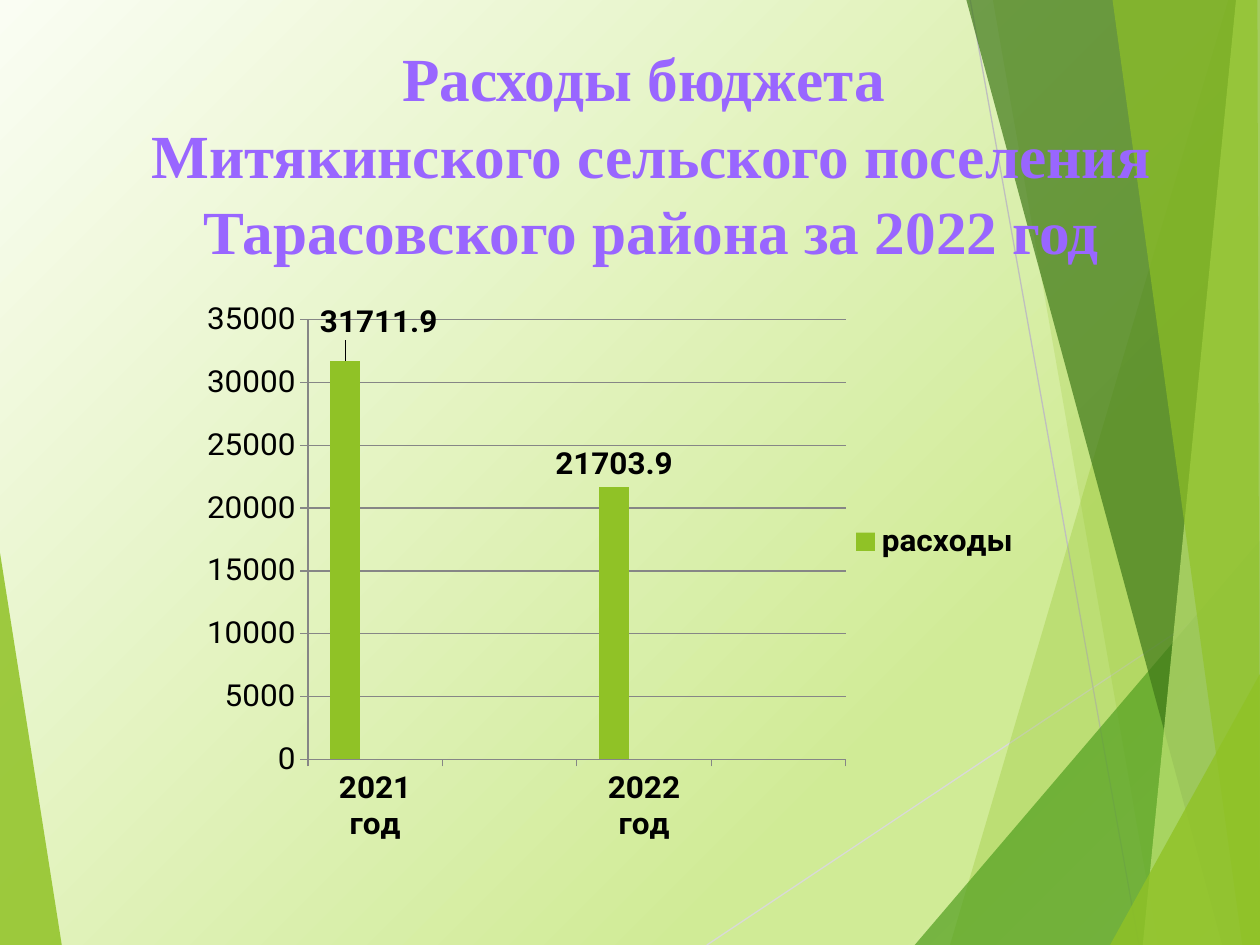
from lxml import etree
from pptx import Presentation
from pptx.chart import data as cd
from pptx.dml import color as clr
from pptx.enum import chart as ch, shapes, text
from pptx.oxml import ns, xmlchemy as xc
from pptx.util import Inches, Pt

THEME = {
    "lime": "90C226", "green": "54A021", "forest": "3F7819", "pale": "C0E474",
    "gold": "E6B91E", "title": "9966FF", "ink": "000000", "grid": "868686",
    "background": [(0, "FAFDF3"), (74, "D0EB96"), (83, "D0EB96"), (100, "DFF1B9")],
    "title_font": "Times New Roman", "chart_font": "Roboto",
    "title_size": Pt(35), "chart_size": Pt(18), "hairline": Pt(0.75),
}

prs = Presentation()
prs.slide_width, prs.slide_height = Inches(10), Inches(7.5)


def share(*percents):
    sides = (prs.slide_width, prs.slide_height)
    return [int(sides[i % 2] * v / 100) for i, v in enumerate(percents)]


def add_layout(parent, index, **values):
    layout = etree.Element(ns.qn("c:layout"))
    manual = etree.SubElement(layout, ns.qn("c:manualLayout"))
    for tag, value in values.items():
        etree.SubElement(manual, ns.qn("c:" + tag)).set("val", str(value))
    parent.insert(index, layout)


slide = prs.slides.add_slide(prs.slide_layouts[6])
bg = slide.background.fill
bg.gradient()
stops = slide._element.find(".//" + ns.qn("a:gsLst"))
for old in list(stops):
    stops.remove(old)
for place, rgb in THEME["background"]:
    gs = etree.SubElement(stops, ns.qn("a:gs"), pos=str(place * 1000))
    etree.SubElement(gs, ns.qn("a:srgbClr"), val=rgb)
slide._element.find(".//" + ns.qn("a:lin")).set("ang", str(45 * 60000))

rays = [((56.1, 100, 100, 61), "D9D9D9"), ((77, 0, 90.4, 100), "BFBFBF")]
facets = [
    ("lime", 85, [(0, 58.5), (4.9, 100), (0, 100)]),
    ("lime", 30, [(97.5, 0), (75.4, 100), (100, 100), (100, 0)]),
    ("lime", 20, [(78.8, 0), (91.9, 100), (100, 100), (100, 0)]),
    ("green", 72, [(72.6, 100), (100, 57.2), (100, 100)]),
    ("forest", 70, [(76.7, 0), (97, 100), (100, 100), (100, 0)]),
    ("pale", 70, [(98.1, 0), (90.7, 100), (100, 100), (100, 0)]),
    ("lime", 65, [(88.3, 0), (98.6, 100), (100, 100), (99.8, 0)]),
    ("lime", 80, [(88.1, 100), (100, 71.3), (100, 100)]),
]

for i, (name, opacity, corners) in enumerate(facets):
    points = [share(*c) for c in corners]
    builder = slide.shapes.build_freeform(*points[0])
    builder.add_line_segments(points[1:])
    sp = builder.convert_to_shape()
    sp.shadow.inherit = False
    sp.fill.solid()
    sp.fill.fore_color.rgb = clr.RGBColor.from_string(THEME[name])
    rgb = sp._element.spPr.find(".//" + ns.qn("a:srgbClr"))
    etree.SubElement(rgb, ns.qn("a:alpha"), val=str(opacity * 1000))
    sp.line.fill.background()
    if i == 0:
        for ends, color in rays:
            ray = slide.shapes.add_connector(shapes.MSO_CONNECTOR.STRAIGHT, *share(*ends))
            ray.line.color.rgb = clr.RGBColor.from_string(color)
            ray.line.width = THEME["hairline"]
            etree.SubElement(ray._element.spPr, ns.qn("a:effectLst"))

title = slide.shapes.add_textbox(*share(6.7, 3.33, 90, 16.67))
tf = title.text_frame
tf.word_wrap = True
tf.vertical_anchor = text.MSO_ANCHOR.TOP
lines = ["Расходы бюджета ", "Митякинского сельского поселения Тарасовского района за 2022 год"]
for i, line in enumerate(lines):
    p = tf.add_paragraph() if i else tf.paragraphs[0]
    p.alignment = text.PP_ALIGN.CENTER
    p.line_spacing = 1.04
    r = p.add_run()
    r.text = line
    r.font.size, r.font.bold, r.font.name = THEME["title_size"], True, THEME["title_font"]
    r.font.color.rgb = clr.RGBColor.from_string(THEME["title"])
    effects = etree.Element(ns.qn("a:effectLst"))
    shadow = etree.SubElement(effects, ns.qn("a:outerShdw"), blurRad="38100", dist="25400", dir="13500000")
    dark = etree.SubElement(shadow, ns.qn("a:srgbClr"), val=THEME["ink"])
    etree.SubElement(dark, ns.qn("a:alpha"), val="50000")
    r._r.rPr.find(ns.qn("a:solidFill")).addnext(effects)

spending = cd.CategoryChartData()
spending.categories = ["2021 год", "", "2022 год", ""]
spending.add_series("расходы", [31711.9, None, 21703.9, None])
for name in ("Series 2", "Series 3"):
    spending.add_series(name, [None] * 4)
chart = slide.shapes.add_chart(
    ch.XL_CHART_TYPE.COLUMN_CLUSTERED, *share(15.1, 29.87, 66.7, 59.2), spending).chart
chart.has_title = False
chart.font.size, chart.font.name = THEME["chart_size"], THEME["chart_font"]
chart.font.color.rgb = clr.RGBColor.from_string(THEME["ink"])

plot = chart.plots[0]
plot.gap_width, plot.overlap, plot.vary_by_categories = 150, 0, False
for series, name in zip(plot.series, ("lime", "green", "gold")):
    series.format.fill.solid()
    series.format.fill.fore_color.rgb = clr.RGBColor.from_string(THEME[name])

labels = plot.series[0].data_labels
labels.show_value = True
labels.position = ch.XL_LABEL_POSITION.OUTSIDE_END
labels.font.bold, labels.font.size = True, THEME["chart_size"]
first = plot.series[0].points[0].data_label
first.position = ch.XL_LABEL_POSITION.OUTSIDE_END
first.font.bold, first.font.size = True, THEME["chart_size"]
add_layout(labels._element.find(ns.qn("c:dLbl")), 1, x=0.04, y=-0.03)

values, years = chart.value_axis, chart.category_axis
values.minimum_scale, values.maximum_scale, values.major_unit = 0, 35000, 5000
values.has_major_gridlines = True
values.tick_labels.number_format, values.tick_labels.number_format_is_linked = "General", False
years.tick_labels.font.bold = True
for line in (values.format.line, years.format.line, values.major_gridlines.format.line):
    line.color.rgb = clr.RGBColor.from_string(THEME["grid"])
    line.width = THEME["hairline"]
for axis in (values, years):
    axis.major_tick_mark = ch.XL_TICK_MARK.OUTSIDE

area = chart._chartSpace.find(".//" + ns.qn("c:plotArea"))
for old in area.findall(ns.qn("c:layout")):
    area.remove(old)
add_layout(area, 0, layoutTarget="inner", xMode="edge", yMode="edge", x=0.14, y=0.07, w=0.64, h=0.82)

chart.has_legend = True
legend = chart.legend
legend.position = ch.XL_LEGEND_POSITION.RIGHT
legend.include_in_layout = False
legend.font.bold, legend.font.size = True, THEME["chart_size"]
for old in legend._element.findall(ns.qn("c:layout")):
    legend._element.remove(old)
for i in (1, 2):
    entry = etree.Element(ns.qn("c:legendEntry"))
    etree.SubElement(entry, ns.qn("c:idx")).set("val", str(i))
    etree.SubElement(entry, ns.qn("c:delete")).set("val", "1")
    legend._element.insert(i, entry)
add_layout(legend._element, 3, xMode="edge", yMode="edge", x=0.78, y=0.44)

prs.save("out.pptx")
